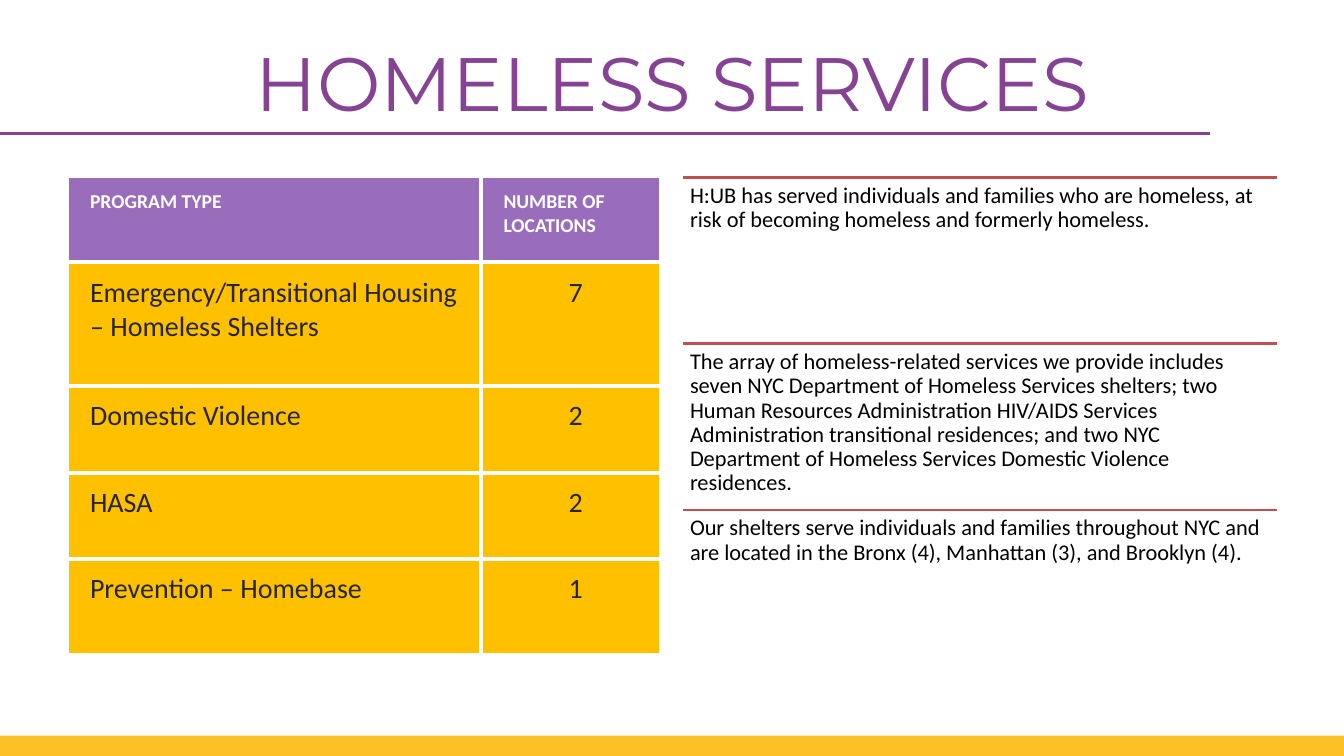
import pptx
import pptx.util
import pptx.dml.color
import pptx.enum.shapes
import pptx.enum.text
import pptx.oxml
import pptx.oxml.ns
from dataclasses import dataclass

Cm, Pt = pptx.util.Cm, pptx.util.Pt
RGB = pptx.dml.color.RGBColor.from_string
Align = pptx.enum.text.PP_ALIGN
Anchor = pptx.enum.text.MSO_ANCHOR


@dataclass
class Theme:
    plum: str = "864393"
    head: str = "7030A0"
    gold: str = "FFC000"
    bar: str = "FCC127"
    rule: str = "C0504D"
    white: str = "FFFFFF"
    black: str = "000000"
    dark: str = "262626"
    sans: str = "Calibri"
    show: str = "Montserrat"
    title: float = 54
    cell: float = 20
    note: float = 16
    label: float = 14


theme = Theme()


def write(frame, text, size, color, font=theme.sans, bold=False,
          align=Align.LEFT, line=1.0, after=0):
    frame.word_wrap = True
    par = frame.paragraphs[0]
    par.alignment = align
    par.line_spacing = line
    par.space_before = Pt(0)
    par.space_after = Pt(after)
    run = par.add_run()
    run.text = text
    run.font.size = Pt(size)
    run.font.name = font
    run.font.bold = bold
    run.font.color.rgb = RGB(color)


def rule(left, top, right, color):
    line = slide.shapes.add_connector(
        pptx.enum.shapes.MSO_CONNECTOR.STRAIGHT, Cm(left), Cm(top), Cm(right), Cm(top))
    line.line.color.rgb = RGB(color)
    line.line.width = Pt(2)
    pptx.oxml.ns.qn("a:effectLst")
    line._element.spPr.append(pptx.oxml.parse_xml(
        f'<a:effectLst {pptx.oxml.ns.nsdecls("a")}/>'))


deck = pptx.Presentation()
deck.slide_width, deck.slide_height = Cm(33.87), Cm(19.05)
slide = deck.slides.add_slide(deck.slide_layouts[5])

# Footer bar and title rule
bar = slide.shapes.add_shape(pptx.enum.shapes.MSO_SHAPE.RECTANGLE,
                             0, Cm(18.54), deck.slide_width, Cm(0.51))
bar.shadow.inherit = False
bar.fill.solid()
bar.fill.fore_color.rgb = RGB(theme.bar)
bar.line.fill.background()
rule(0, 3.37, 30.5, theme.plum)

# Title
title = slide.shapes.title
title.left, title.top, title.width, title.height = Cm(1.7), Cm(0.76), Cm(30.48), Cm(2.59)
title.text_frame.auto_size = pptx.enum.text.MSO_AUTO_SIZE.NONE
title.text_frame.vertical_anchor = Anchor.MIDDLE
write(title.text_frame, "HOMELESS SERVICES", theme.title, theme.plum,
      font=theme.show, align=Align.CENTER)

# Notes, each under its own rule
notes = [
    "H:UB has served individuals and families who are homeless, at risk of "
    "becoming homeless and formerly homeless.",
    "The array of homeless-related services we provide includes seven NYC "
    "Department of Homeless Services shelters; two Human Resources Administration "
    "HIV/AIDS Services Administration transitional residences; and two NYC "
    "Department of Homeless Services Domestic Violence residences.",
    "Our shelters serve individuals and families throughout NYC and are located "
    "in the Bronx (4), Manhattan (3), and Brooklyn (4).",
]
left, wide, step = 17.22, 14.96, 4.19
for i, note in enumerate(notes):
    top = 4.47 + i * step
    rule(left, top, left + wide, theme.rule)
    frame = slide.shapes.add_textbox(Cm(left), Cm(top), Cm(wide), Cm(step)).text_frame
    frame.margin_left = frame.margin_right = Cm(0.17)
    frame.margin_top = frame.margin_bottom = Cm(0.17)
    write(frame, note, theme.note, theme.black, line=0.9, after=5.6)

# Table of programs
rows = [
    ("PROGRAM TYPE", "NUMBER OF LOCATIONS"),
    ("Emergency/Transitional Housing – Homeless Shelters", "7"),
    ("Domestic Violence", "2"),
    ("HASA", "2"),
    ("Prevention – Homebase", "1"),
]
highs = [2.16, 3.12, 2.18, 2.18, 2.4]
wides = [10.42, 4.54]
grid = slide.shapes.add_table(len(rows), len(wides), Cm(1.7), Cm(4.45),
                              Cm(sum(wides)), Cm(sum(highs))).table
for col, width in zip(grid.columns, wides):
    col.width = Cm(width)
for r, (row, high) in enumerate(zip(rows, highs)):
    grid.rows[r].height = Cm(high)
    for c, text in enumerate(row):
        cell = grid.cell(r, c)
        cell.margin_left = Cm(0.57)
        cell.margin_right = cell.margin_top = cell.margin_bottom = Cm(0.33)
        cell.vertical_anchor = Anchor.TOP
        cell.fill.solid()
        cell.fill.fore_color.rgb = RGB(theme.gold if r else theme.head)
        props = cell._tc.get_or_add_tcPr()
        if r:
            write(cell.text_frame, text, theme.cell, theme.dark,
                  align=Align.CENTER if c else Align.LEFT)
        else:
            write(cell.text_frame, text, theme.label, theme.white, bold=True)
            tint = props.find(".//" + pptx.oxml.ns.qn("a:srgbClr"))
            tint.append(pptx.oxml.parse_xml(
                f'<a:alpha {pptx.oxml.ns.nsdecls("a")} val="70000"/>'))
        # White borders come before the fill
        for k, side in enumerate("LRTB"):
            props.insert(k, pptx.oxml.parse_xml(
                f'<a:ln{side} {pptx.oxml.ns.nsdecls("a")} w="{Pt(3)}"><a:solidFill>'
                f'<a:srgbClr val="{theme.white}"/></a:solidFill></a:ln{side}>'))

deck.save("out.pptx")
